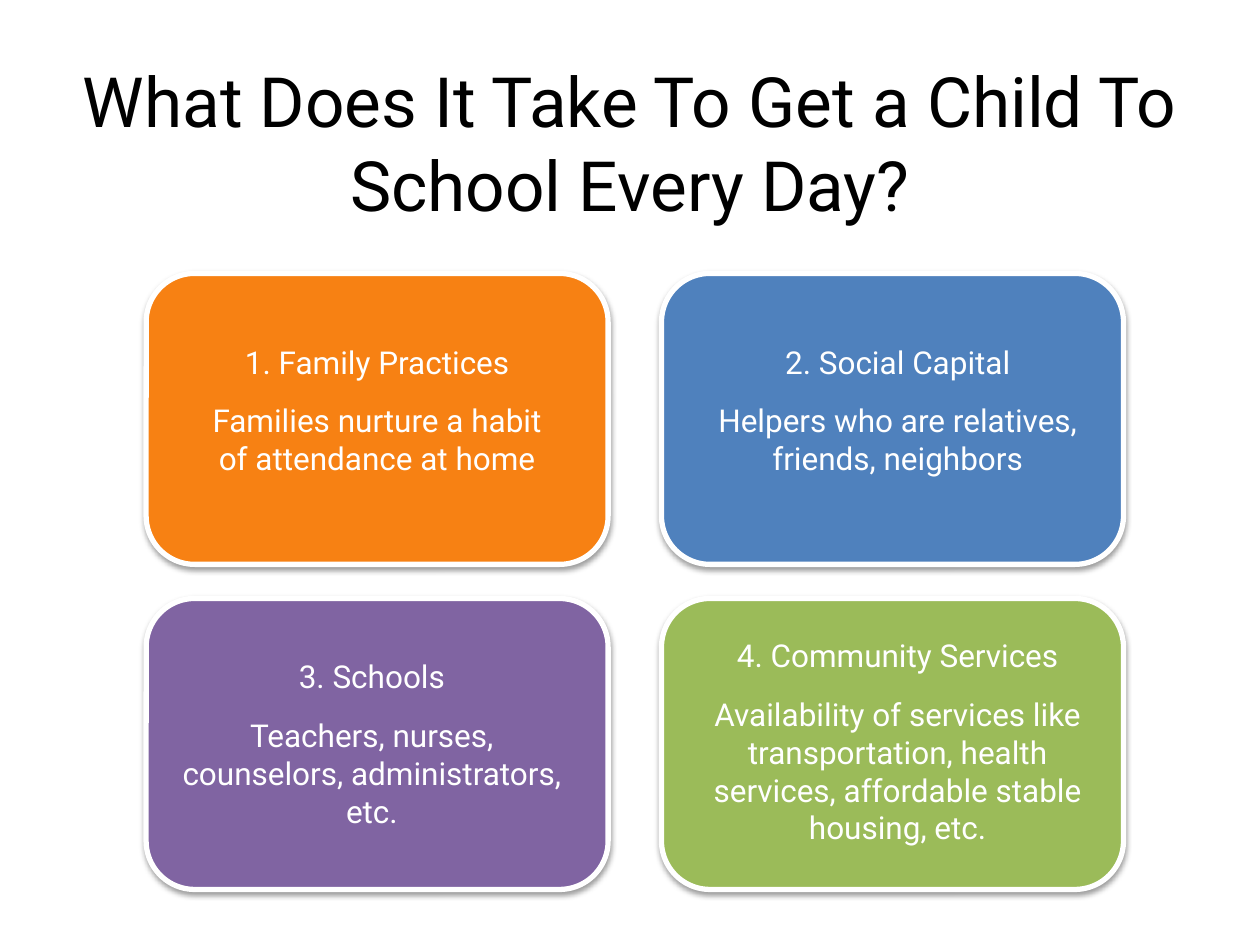
from collections import namedtuple
from dataclasses import dataclass

from lxml import etree
from pptx import Presentation
from pptx.dml.color import RGBColor
from pptx.enum import shapes, text
from pptx.oxml import ns
from pptx.util import Pt

Box = namedtuple("Box", "left top width height")
Card = namedtuple("Card", "heading body colour inset")


@dataclass(frozen=True)
class Theme:
    font: str = "Roboto"
    title_size: float = 39.6
    card_size: float = 18
    ink: str = "000000"
    paper: str = "FFFFFF"
    orange: str = "F78113"
    blue: str = "4F81BD"
    purple: str = "8064A2"
    green: str = "9BBB59"


THEME = Theme()
TITLE = "What Does It Take To Get a Child To School Every Day?"
TITLE_BOX = Box(36, 36, 648, 90)
GRID_BOX = Box(83.5, 156.25, 558.5, 352)
CARD_WIDTH, CARD_HEIGHT = 264, 166.25

# Each inset is the text box relative to its card; cards run row by row.
CARDS = [
    Card("1. Family Practices", "Families nurture a habit of attendance at home",
         THEME.orange, Box(30, 36, 204, 85)),
    Card("2. Social Capital", "Helpers who are relatives, friends, neighbors",
         THEME.blue, Box(18, 36, 234, 85)),
    Card("3. Schools", "Teachers, nurses, counselors, administrators, etc.",
         THEME.purple, Box(12, 30, 234, 106.5)),
    Card("4. Community Services",
         "Availability of services like transportation, health services, "
         "affordable stable housing, etc.",
         THEME.green, Box(12, 18, 246, 128)),
]


def in_points(box):
    return [Pt(length) for length in box]


def add_text(page, box, paragraphs, *, size, colour, space_after=0,
             anchor=text.MSO_ANCHOR.TOP, fit=text.MSO_AUTO_SIZE.NONE):
    """Add centred paragraphs, with space_after between them."""
    frame = page.shapes.add_textbox(*in_points(box)).text_frame
    frame.word_wrap = True
    frame.auto_size = fit
    frame.vertical_anchor = anchor
    for index, words in enumerate(paragraphs):
        para = frame.add_paragraph() if index else frame.paragraphs[0]
        para.alignment = text.PP_ALIGN.CENTER
        if index < len(paragraphs) - 1:
            para.space_after = Pt(space_after)
        span = para.add_run()
        span.text = words
        span.font.name = THEME.font
        span.font.size = Pt(size)
        span.font.color.rgb = RGBColor.from_string(colour)


def add_soft_shadow(shape):
    shape.shadow.inherit = False
    effects = shape._element.spPr.find(ns.qn("a:effectLst"))
    shadow = etree.SubElement(
        effects, ns.qn("a:outerShdw"), blurRad=str(Pt(3.1)), dist=str(Pt(1.6)),
        dir="5400000", rotWithShape="0")
    colour = etree.SubElement(shadow, ns.qn("a:srgbClr"), val=THEME.ink)
    etree.SubElement(colour, ns.qn("a:alpha"), val="38000")


def add_card(page, box, card):
    panel = page.shapes.add_shape(
        shapes.MSO_SHAPE.ROUNDED_RECTANGLE, *in_points(box))
    panel.fill.solid()
    panel.fill.fore_color.rgb = RGBColor.from_string(card.colour)
    panel.line.color.rgb = RGBColor.from_string(THEME.paper)
    panel.line.width = Pt(3)
    add_soft_shadow(panel)
    inset = card.inset
    add_text(page, inset._replace(left=box.left + inset.left, top=box.top + inset.top),
             [card.heading, card.body], size=THEME.card_size, colour=THEME.paper,
             space_after=12, fit=text.MSO_AUTO_SIZE.SHAPE_TO_FIT_TEXT)


def add_card_grid(page, box, cards):
    """Place the cards two to a row, flush with the edges of the box."""
    for index, card in enumerate(cards):
        row, column = divmod(index, 2)
        left = box.left + column * (box.width - CARD_WIDTH)
        top = box.top + row * (box.height - CARD_HEIGHT)
        add_card(page, Box(left, top, CARD_WIDTH, CARD_HEIGHT), card)


def main():
    deck = Presentation()
    deck.slide_width, deck.slide_height = Pt(720), Pt(540)
    page = deck.slides.add_slide(deck.slide_layouts[6])
    add_text(page, TITLE_BOX, [TITLE], size=THEME.title_size, colour=THEME.ink,
             anchor=text.MSO_ANCHOR.MIDDLE)
    add_card_grid(page, GRID_BOX, CARDS)
    deck.save("out.pptx")


if __name__ == "__main__":
    main()
